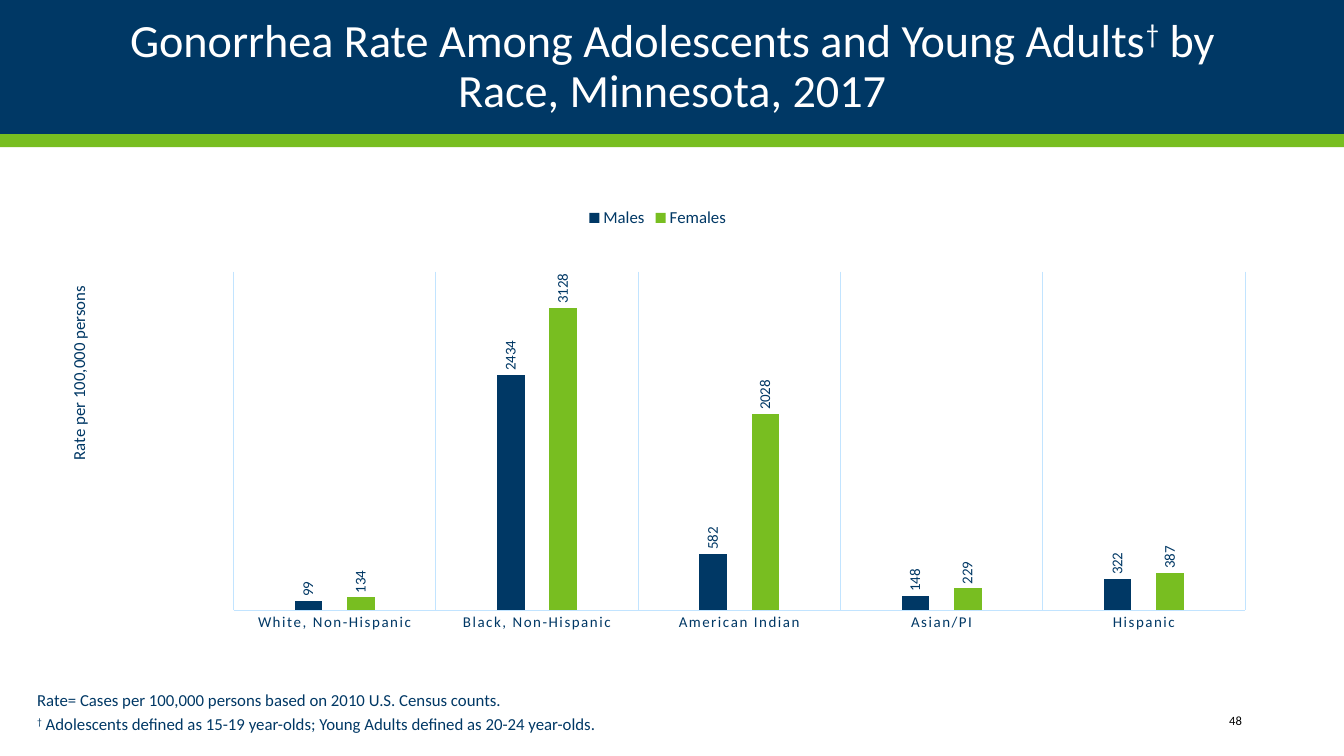
from lxml import etree
from pptx import Presentation
from pptx.chart.data import CategoryChartData
from pptx.dml.color import RGBColor
from pptx.enum.chart import XL_CHART_TYPE as ChartType
from pptx.enum.chart import XL_LABEL_POSITION as LabelPosition
from pptx.enum.chart import XL_LEGEND_POSITION as LegendPosition
from pptx.enum.chart import XL_TICK_MARK as TickMark
from pptx.enum.shapes import MSO_SHAPE as Shape
from pptx.enum.text import MSO_ANCHOR as Anchor
from pptx.enum.text import PP_ALIGN as Align
from pptx.oxml.ns import qn
from pptx.util import Inches, Pt

COLORS = {"navy": "003865", "green": "78BE21", "grid": "C2E4FF", "white": "FFFFFF", "black": "000000"}
FONT = "Calibri"
LABEL_SIZE = 10.64
DAGGER = "†"
TITLE = ["Gonorrhea Rate Among Adolescents and Young Adults", DAGGER, " by Race, Minnesota, 2017"]
NOTES = [
    ["Rate= Cases per 100,000 persons based on 2010 U.S. Census counts."],
    [DAGGER, " Adolescents defined as 15-19 year-olds; Young Adults defined as 20-24 year-olds."],
]
PAGE_NUMBER = "48"
AXIS_TITLE = "Rate per 100,000 persons"
GROUPS = ["White, Non-Hispanic", "Black, Non-Hispanic", "American Indian", "Asian/PI", "Hispanic"]
RATES = [
    ("Males", "navy", (99, 2434, 582, 148, 322)),
    ("Females", "green", (134, 3128, 2028, 229, 387)),
]
BANDS = [("navy", 0, 1.33), ("green", 1.33, 0.13)]


def color(name):
    return RGBColor.from_string(COLORS[name])


def style(font, size, name="navy"):
    font.name = FONT
    font.size = Pt(size)
    font.bold = False
    font.color.rgb = color(name)


def add_runs(para, texts, size, name):
    for text in texts:
        span = para.add_run()
        span.text = text
        style(span.font, size, name)
        if text == DAGGER:
            span.font._element.set("baseline", "30000")


def add_box(page, left, top, width, height):
    box = page.shapes.add_textbox(Inches(left), Inches(top), Inches(width), Inches(height))
    box.text_frame.word_wrap = True
    return box.text_frame


def set_layout(parent, index, **values):
    old = parent.find(qn("c:layout"))
    if old is not None:
        parent.remove(old)
    layout = etree.Element(qn("c:layout"))
    manual = etree.SubElement(layout, qn("c:manualLayout"))
    for tag, value in values.items():
        etree.SubElement(manual, qn("c:" + tag)).set("val", str(value))
    parent.insert(index, layout)


def clear_frame(area):
    frame = etree.SubElement(area, qn("c:spPr"))
    etree.SubElement(frame, qn("a:noFill"))
    etree.SubElement(etree.SubElement(frame, qn("a:ln")), qn("a:noFill"))


def turn_upright(element):
    body = element.find(".//" + qn("a:bodyPr"))
    body.set("rot", "-5400000")
    body.set("vert", "horz")


def add_bands(page, width):
    for name, top, height in BANDS:
        band = page.shapes.add_shape(Shape.RECTANGLE, 0, Inches(top), width, Inches(height))
        band.shadow.inherit = False
        band.fill.solid()
        band.fill.fore_color.rgb = color(name)
        band.line.fill.background()


def add_title(page):
    title = page.shapes.title
    title.left, title.top = Inches(0.92), Inches(0.17)
    title.width, title.height = Inches(11.5), Inches(1)
    title.text_frame.vertical_anchor = Anchor.MIDDLE
    para = title.text_frame.paragraphs[0]
    para.alignment = Align.CENTER
    para.line_spacing = 0.9
    add_runs(para, TITLE, 33, "white")
    page.shapes._spTree.append(title._element)


def add_rate_chart(page):
    data = CategoryChartData()
    data.categories = GROUPS
    for name, _, values in RATES:
        data.add_series(name, values)
    chart = page.shapes.add_chart(
        ChartType.COLUMN_CLUSTERED, Inches(0.53), Inches(1.95), Inches(11.99), Inches(5.03), data
    ).chart
    chart.has_title = False
    style(chart.font, 10)
    chart.has_legend = True
    chart.legend.position = LegendPosition.TOP
    chart.legend.include_in_layout = False
    style(chart.legend.font, 12)

    plot = chart.plots[0]
    plot.gap_width, plot.overlap, plot.vary_by_categories = 444, -90, False
    for series, (_, name, _) in zip(plot.series, RATES):
        series.format.fill.solid()
        series.format.fill.fore_color.rgb = color(name)
        labels = series.data_labels
        labels.show_value = True
        labels.position = LabelPosition.OUTSIDE_END
        style(labels.font, LABEL_SIZE)
        turn_upright(labels._element)

    groups = chart.category_axis
    groups.major_tick_mark = groups.minor_tick_mark = TickMark.NONE
    groups.has_major_gridlines = True
    for line in (groups.format.line, groups.major_gridlines.format.line):
        line.color.rgb = color("grid")
        line.width = Pt(0.75)
    style(groups.tick_labels.font, LABEL_SIZE)
    groups._element.find(".//" + qn("a:defRPr")).set("spc", "120")

    rates = chart.value_axis
    rates.minimum_scale, rates.maximum_scale = 0, 3500
    rates.has_major_gridlines = False
    rates.visible = False
    add_runs(rates.axis_title.text_frame.paragraphs[0], [AXIS_TITLE], 12, "navy")
    heading = rates.axis_title._element
    turn_upright(heading)
    set_layout(heading, 1, xMode="edge", yMode="edge", x=0.009, y=0.17)
    area = chart._chartSpace.chart.plotArea
    set_layout(
        area, 0, layoutTarget="inner",
        xMode="edge", yMode="edge", x=0.149, y=0.148, w=0.837, h=0.668,
    )
    clear_frame(area)


def add_footer(page):
    number = add_box(page, 10.82, 6.95, 1.6, 0.4)
    number.vertical_anchor = Anchor.MIDDLE
    number.paragraphs[0].alignment = Align.RIGHT
    add_runs(number.paragraphs[0], [PAGE_NUMBER], 9, "black")

    notes = add_box(page, 0.27, 6.78, 7, 0.63)
    notes.margin_top = notes.margin_bottom = Inches(0.1)
    notes.margin_left = notes.margin_right = Inches(0.1)
    for index, texts in enumerate(NOTES):
        para = notes.add_paragraph() if index else notes.paragraphs[0]
        para.line_spacing = 0.8
        before = etree.SubElement(para._p.get_or_add_pPr(), qn("a:spcBef"))
        etree.SubElement(before, qn("a:spcPct")).set("val", "50000")
        add_runs(para, texts, 12, "navy")


def main():
    deck = Presentation()
    deck.slide_width, deck.slide_height = Inches(40 / 3), Inches(7.5)
    page = deck.slides.add_slide(deck.slide_layouts[5])
    add_bands(page, deck.slide_width)
    add_title(page)
    add_rate_chart(page)
    add_footer(page)
    deck.save("out.pptx")


if __name__ == "__main__":
    main()
